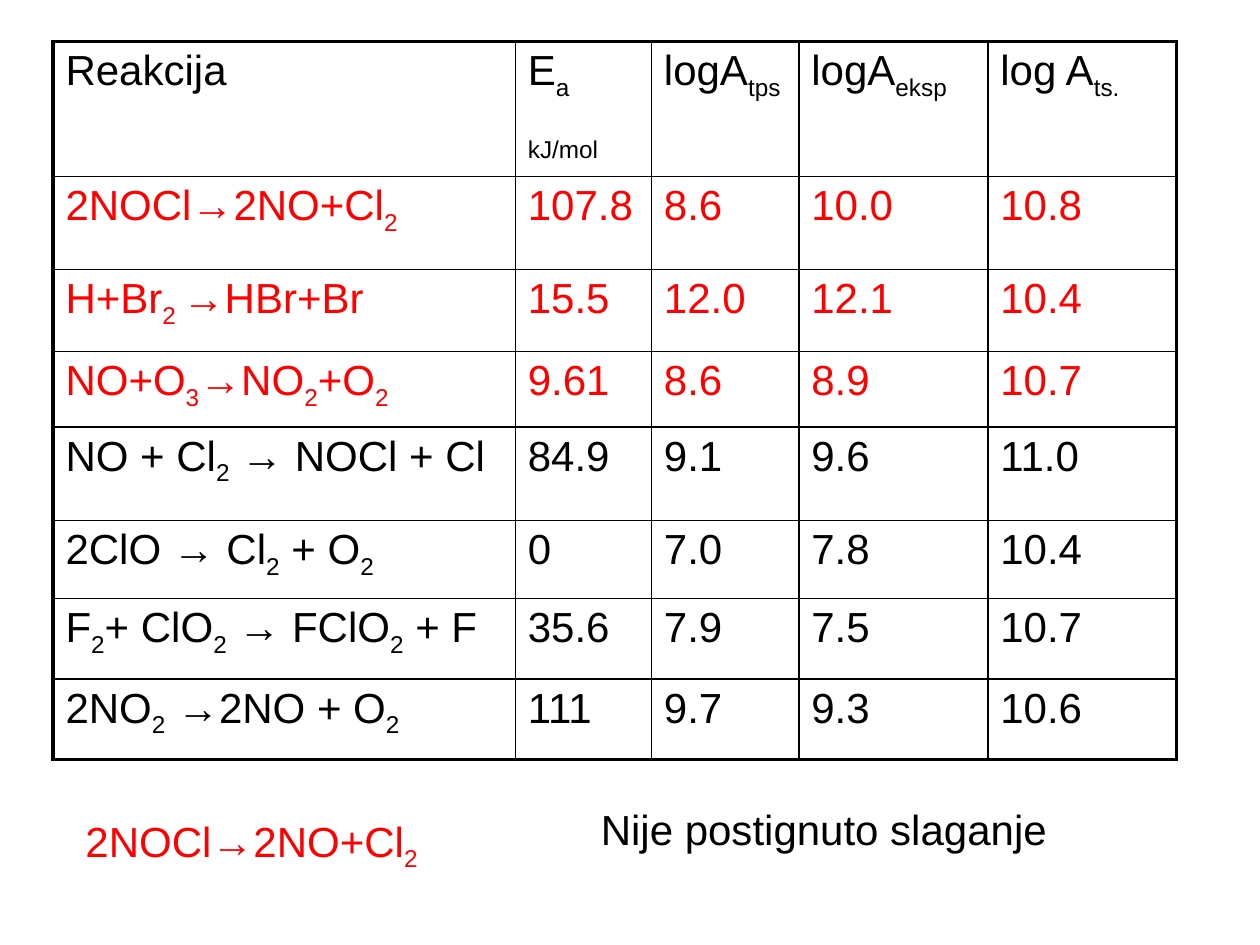
from dataclasses import dataclass
from typing import Any

from lxml import etree
from pptx import Presentation
from pptx.dml import color
from pptx.enum import text
from pptx.oxml import ns
from pptx.util import Inches, Pt


@dataclass(frozen=True)
class Theme:
    ink: str = "000000"
    accent: str = "FF0000"
    paper: str = "FFFFFF"
    font: str = "Arial"
    size: float = 24
    paragraph_gap: float = 4.8
    subscript: int = -25000
    inner_line: float = 1
    outer_line: float = 2.25


@dataclass(frozen=True)
class Row:
    height: float
    cells: tuple[str, ...]
    tint: str


@dataclass(frozen=True)
class Caption:
    left: float
    top: float
    width: float
    height: float
    label: str
    tint: str
    wrap: bool
    filled: bool


THEME = Theme()
NOCL_DECAY = "2NOCl→2NO+Cl_2_"
COLUMN_WIDTHS = (3.67, 1.08, 1.17, 1.5, 1.5)
ROWS = (
    Row(1.07, ("Reakcija", "E_a_\n_kJ/mol_", "logA_tps_", "logA_eksp_", "log A_ts._"), THEME.ink),
    Row(0.74, (NOCL_DECAY, "107.8", "8.6", "10.0", "10.8"), THEME.accent),
    Row(0.65, ("H+Br_2 _→HBr+Br", "15.5", "12.0", "12.1", "10.4"), THEME.accent),
    Row(0.6, ("NO+O_3_→NO_2_+O_2_", "9.61", "8.6", "8.9", "10.7"), THEME.accent),
    Row(0.74, ("NO + Cl_2_ → NOCl + Cl", "84.9", "9.1", "9.6", "11.0"), THEME.ink),
    Row(0.62, ("2ClO → Cl_2_ + O_2_", "0", "7.0", "7.8", "10.4"), THEME.ink),
    Row(0.64, ("F_2_+ ClO_2_ → FClO_2_ + F", "35.6", "7.9", "7.5", "10.7"), THEME.ink),
    Row(0.64, ("2NO_2_ →2NO + O_2_", "111", "9.7", "9.3", "10.6"), THEME.ink),
)
CAPTIONS = (
    Caption(0.58, 6.42, 4.08, 0.5, NOCL_DECAY, THEME.accent, True, True),
    Caption(4.67, 6.33, 3.97, 0.5, "Nije postignuto slaganje", THEME.ink, False, False),
)


def apply_format(target: Any, values: dict[str, Any]) -> None:
    for name, value in values.items():
        setattr(target, name, value)


def paint(target: Any, tint: str) -> None:
    target.fill.solid()
    target.fill.fore_color.rgb = color.RGBColor.from_string(tint)


def write_formula(frame: Any, label: str, tint: str) -> None:
    for index, line in enumerate(label.split("\n")):
        para = frame.add_paragraph() if index else frame.paragraphs[0]
        apply_format(para, {
            "alignment": text.PP_ALIGN.LEFT,
            "space_before": Pt(THEME.paragraph_gap if index else 0),
        })
        for position, piece in enumerate(line.split("_")):
            if not piece:
                continue
            span = para.add_run()
            span.text = piece
            apply_format(span.font, {"name": THEME.font, "size": Pt(THEME.size), "bold": False})
            span.font.color.rgb = color.RGBColor.from_string(tint)
            if position % 2:
                span.font._element.set("baseline", str(THEME.subscript))


def draw_borders(cell: Any, outer_sides: dict[str, bool]) -> None:
    properties = cell._tc.get_or_add_tcPr()
    for index, (side, outer) in enumerate(outer_sides.items()):
        width = THEME.outer_line if outer else THEME.inner_line
        line = etree.Element(ns.qn(f"a:{side}"), w=str(Pt(width)))
        fill = etree.SubElement(line, ns.qn("a:solidFill"))
        etree.SubElement(fill, ns.qn("a:srgbClr"), val=THEME.ink)
        properties.insert(index, line)


def draw_table(page: Any, left: float, top: float) -> None:
    width = sum(COLUMN_WIDTHS)
    height = sum(row.height for row in ROWS)
    table = page.shapes.add_table(
        len(ROWS), len(COLUMN_WIDTHS), Inches(left), Inches(top), Inches(width), Inches(height)
    ).table
    apply_format(table, {"first_row": False, "horz_banding": False})
    for column, column_width in zip(table.columns, COLUMN_WIDTHS):
        column.width = Inches(column_width)
    last_row, last_column = len(ROWS) - 1, len(COLUMN_WIDTHS) - 1
    for row_index, row in enumerate(ROWS):
        table.rows[row_index].height = Inches(row.height)
        for column_index, label in enumerate(row.cells):
            cell = table.cell(row_index, column_index)
            paint(cell, THEME.paper)
            write_formula(cell.text_frame, label, row.tint)
            draw_borders(cell, {
                "lnL": column_index == 0,
                "lnR": column_index == last_column,
                "lnT": row_index == 0,
                "lnB": row_index == last_row,
            })


def draw_caption(page: Any, caption: Caption) -> None:
    box = page.shapes.add_textbox(
        Inches(caption.left), Inches(caption.top), Inches(caption.width), Inches(caption.height)
    )
    if caption.filled:
        paint(box, THEME.paper)
    apply_format(box.text_frame, {
        "word_wrap": caption.wrap,
        "auto_size": text.MSO_AUTO_SIZE.SHAPE_TO_FIT_TEXT,
    })
    write_formula(box.text_frame, caption.label, caption.tint)


def main() -> None:
    deck = Presentation()
    apply_format(deck, {"slide_width": Inches(10), "slide_height": Inches(7.5)})
    page = deck.slides.add_slide(deck.slide_layouts[6])
    draw_table(page, 0.42, 0.33)
    for caption in CAPTIONS:
        draw_caption(page, caption)
    deck.save("out.pptx")


if __name__ == "__main__":
    main()
